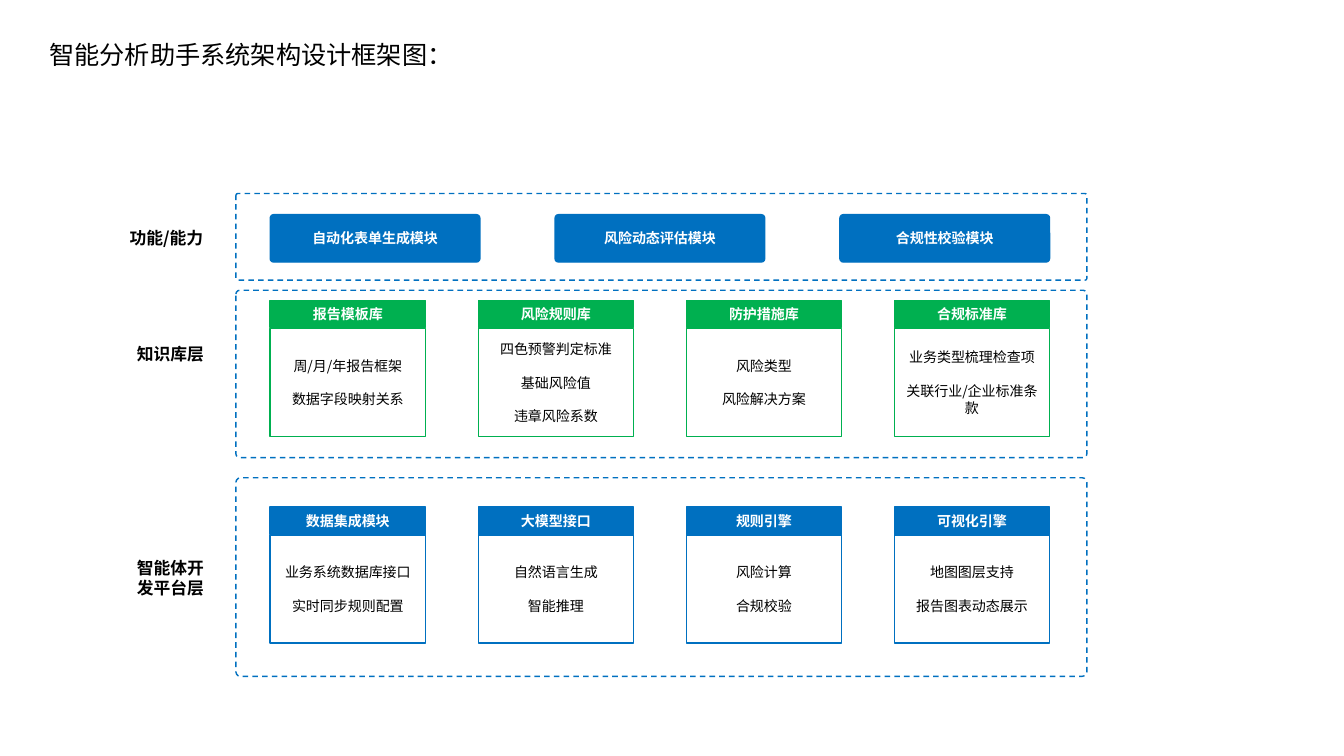
from lxml.etree import SubElement
from pptx import Presentation
from pptx.dml.color import RGBColor
from pptx.enum.dml import MSO_LINE
from pptx.enum.shapes import MSO_SHAPE
from pptx.enum.text import MSO_ANCHOR, MSO_AUTO_SIZE, PP_ALIGN
from pptx.oxml.ns import qn
from pptx.util import Inches, Pt

FONT = "Noto Sans CJK SC"
BLUE, GREEN, WHITE, BLACK = "0070C0", "00B050", "FFFFFF", "000000"
FRAME_LEFT, FRAME_WIDTH = 2.34, 8.44
CONTENT_LEFT, CONTENT_WIDTH = 2.68, 7.73
CARD_WIDTH, HEADER_HEIGHT, BODY_HEIGHT = 1.54, 0.27, 1.07
MODULE_WIDTH, MODULE_HEIGHT = 2.08, 0.47

MODULES = ["自动化表单生成模块", "风险动态评估模块", "合规性校验模块"]
KNOWLEDGE = [
    ("报告模板库", ["周/月/年报告框架", "数据字段映射关系"]),
    ("风险规则库", ["四色预警判定标准", "基础风险值", "违章风险系数"]),
    ("防护措施库", ["风险类型", "风险解决方案"]),
    ("合规标准库", ["业务类型梳理检查项", "关联行业/企业标准条款"]),
]
PLATFORM = [
    ("数据集成模块", ["业务系统数据库接口", "实时同步规则配置"]),
    ("大模型接口", ["自然语言生成", "智能推理"]),
    ("规则引擎", ["风险计算", "合规校验"]),
    ("可视化引擎", ["地图图层支持", "报告图表动态展示"]),
]


def color(value):
    return RGBColor.from_string(value)


def spread(count, width):
    """Left edges of equal items that fill the content width."""
    step = (CONTENT_WIDTH - width) / (count - 1)
    return [CONTENT_LEFT + i * step for i in range(count)]


def write(frame, lines, size, ink, bold=False, align=PP_ALIGN.CENTER):
    frame.word_wrap = True
    for i, line in enumerate(lines):
        paragraph = frame.paragraphs[0] if i == 0 else frame.add_paragraph()
        paragraph.alignment = align
        if i:
            paragraph.space_before = Pt(size * 1.2)
        run = paragraph.add_run()
        run.text = line
        for key, value in {"size": Pt(size), "bold": bold, "name": FONT}.items():
            setattr(run.font, key, value)
        run.font.color.rgb = color(ink)
        SubElement(run.font._element, qn("a:ea"), typeface=FONT)


def add_box(shapes, box, line, fill=None, rounding=None):
    kind = MSO_SHAPE.RECTANGLE if rounding is None else MSO_SHAPE.ROUNDED_RECTANGLE
    shape = shapes.add_shape(kind, *map(Inches, box))
    shape.shadow.inherit = False
    if rounding is not None:
        shape.adjustments[0] = rounding
    if fill:
        shape.fill.solid()
        shape.fill.fore_color.rgb = color(fill)
    else:
        shape.fill.background()
    shape.line.color.rgb = color(line)
    shape.line.width = Pt(1)
    shape.text_frame.vertical_anchor = MSO_ANCHOR.MIDDLE
    return shape


def add_text(slide, box, text, size, **style):
    frame = slide.shapes.add_textbox(*map(Inches, box)).text_frame
    write(frame, [text], size, BLACK, **style)
    frame.auto_size = MSO_AUTO_SIZE.SHAPE_TO_FIT_TEXT


def add_layer(slide, top, height, label, label_box):
    """Dashed frame of a layer with its label on the left."""
    frame = add_box(slide.shapes, (FRAME_LEFT, top, FRAME_WIDTH, height), BLUE, rounding=0.023)
    frame.line.dash_style = MSO_LINE.DASH
    add_text(slide, label_box, label, 12, bold=True)


def add_modules(slide, top):
    for left, name in zip(spread(len(MODULES), MODULE_WIDTH), MODULES):
        module = add_box(slide.shapes, (left, top, MODULE_WIDTH, MODULE_HEIGHT), BLUE, BLUE, 0.074)
        write(module.text_frame, [name], 10, WHITE, bold=True)


def add_cards(slide, top, cards, accent):
    for left, (heading, items) in zip(spread(len(cards), CARD_WIDTH), cards):
        card = slide.shapes.add_group_shape().shapes
        header = add_box(card, (left, top, CARD_WIDTH, HEADER_HEIGHT), accent, accent)
        write(header.text_frame, [heading], 10, WHITE, bold=True)
        body = add_box(card, (left, top + HEADER_HEIGHT + 0.01, CARD_WIDTH, BODY_HEIGHT), accent)
        write(body.text_frame, items, 10, BLACK)


def main():
    deck = Presentation()
    deck.slide_width, deck.slide_height = Inches(13.33), Inches(7.5)
    slide = deck.slides.add_slide(deck.slide_layouts[6])
    add_text(slide, (0.39, 0.34, 6.67, 0.4), "智能分析助手系统架构设计框架图：", 18, align=PP_ALIGN.LEFT)
    add_layer(slide, 1.92, 0.86, "功能/能力", (1.14, 2.21, 1.02, 0.3))
    add_modules(slide, 2.13)
    add_layer(slide, 2.88, 1.66, "知识库层", (1.22, 3.36, 0.94, 0.3))
    add_cards(slide, 2.98, KNOWLEDGE, GREEN)
    add_layer(slide, 4.74, 1.97, "智能体开发平台层", (1.22, 5.48, 0.94, 0.5))
    add_cards(slide, 5.03, PLATFORM, BLUE)
    deck.save("out.pptx")


if __name__ == "__main__":
    main()
